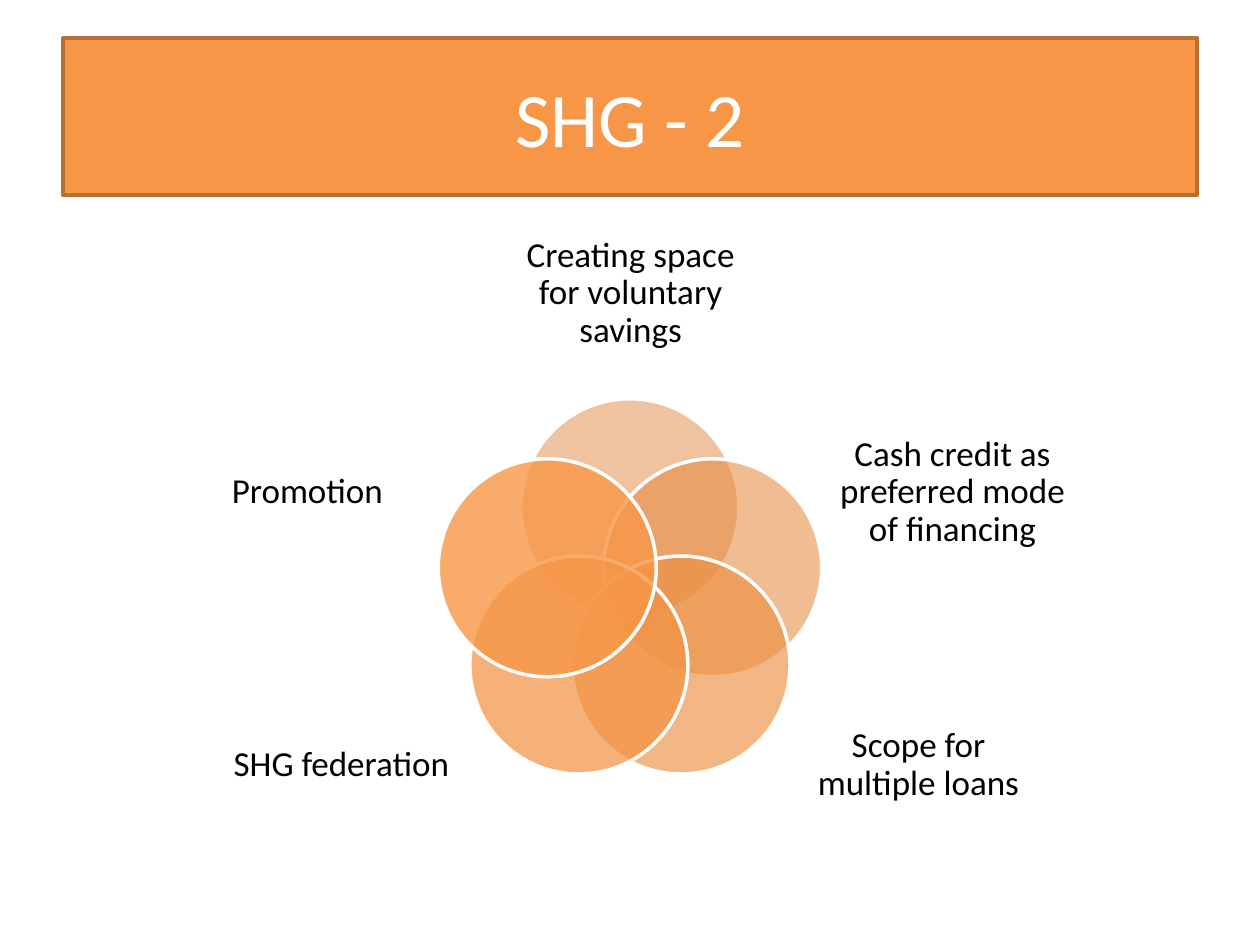
from math import cos, pi, sin

from pptx import Presentation
from pptx.dml.color import RGBColor
from pptx.enum.shapes import MSO_SHAPE
from pptx.enum.text import MSO_ANCHOR, PP_ALIGN
from pptx.oxml.ns import qn
from pptx.util import Inches, Pt
from lxml.etree import SubElement

TITLE = "SHG - 2"

# Clockwise from the top: label, label box, circle colour, opacity in percent
PETALS = [
    ("Creating space for voluntary savings", (4, 1.75, 2.01, 1.16), "E08840", 50),
    ("Cash credit as preferred mode of financing", (6.66, 3.28, 1.8, 1.26), "E68C41", 57),
    ("Scope for multiple loans", (6.39, 5.44, 1.8, 1.26), "EC8F43", 65),
    ("SHG federation", (1.81, 5.44, 1.8, 1.26), "F29345", 72),
    ("Promotion", (1.54, 3.28, 1.8, 1.26), "F79747", 80),
]
CENTER_X, CENTER_Y = 5, 4.72
RING_RADIUS = 0.69
DIAMETER = 1.73


def rgb(color):
    return RGBColor.from_string(color)


def add_filled(s, kind, box, fill, line, opacity=100):
    sp = s.shapes.add_shape(kind, *map(Inches, box))
    sp.shadow.inherit = False
    sp.fill.solid()
    sp.fill.fore_color.rgb = rgb(fill)
    sp.line.color.rgb = rgb(line)
    sp.line.width = Pt(2)
    if opacity < 100:
        color = sp.fill._xPr.find(qn("a:solidFill"))[0]
        SubElement(color, qn("a:alpha"), val=str(opacity * 1000))
    return sp


def write(sp, text, size=20, color="000000", spacing=1.0, margin=0):
    tf = sp.text_frame
    tf.word_wrap = True
    tf.vertical_anchor = MSO_ANCHOR.MIDDLE
    tf.margin_left = tf.margin_right = Inches(margin)
    tf.margin_top = tf.margin_bottom = Inches(margin)
    p = tf.paragraphs[0]
    p.alignment = PP_ALIGN.CENTER
    p.line_spacing = spacing
    r = p.add_run()
    r.text = text
    r.font.name = "Calibri"
    r.font.size = Pt(size)
    r.font.color.rgb = rgb(color)


prs = Presentation()
prs.slide_width, prs.slide_height = Inches(10), Inches(7.5)
s = prs.slides.add_slide(prs.slide_layouts[6])

# Title banner
banner = add_filled(s, MSO_SHAPE.RECTANGLE, (0.5, 0.3, 9, 1.25), "F79646", "B76F34")
write(banner, TITLE, size=44, color="FFFFFF", margin=0.05)

# Ring of overlapping circles, each with its label
for i, (label, box, fill, opacity) in enumerate(PETALS):
    angle = 2 * pi * i / len(PETALS)
    left = CENTER_X + RING_RADIUS * sin(angle) - DIAMETER / 2
    top = CENTER_Y - RING_RADIUS * cos(angle) - DIAMETER / 2
    add_filled(s, MSO_SHAPE.OVAL, (left, top, DIAMETER, DIAMETER), fill, "FFFFFF", opacity)
    write(s.shapes.add_textbox(*map(Inches, box)), label, spacing=0.9)

prs.save("out.pptx")
